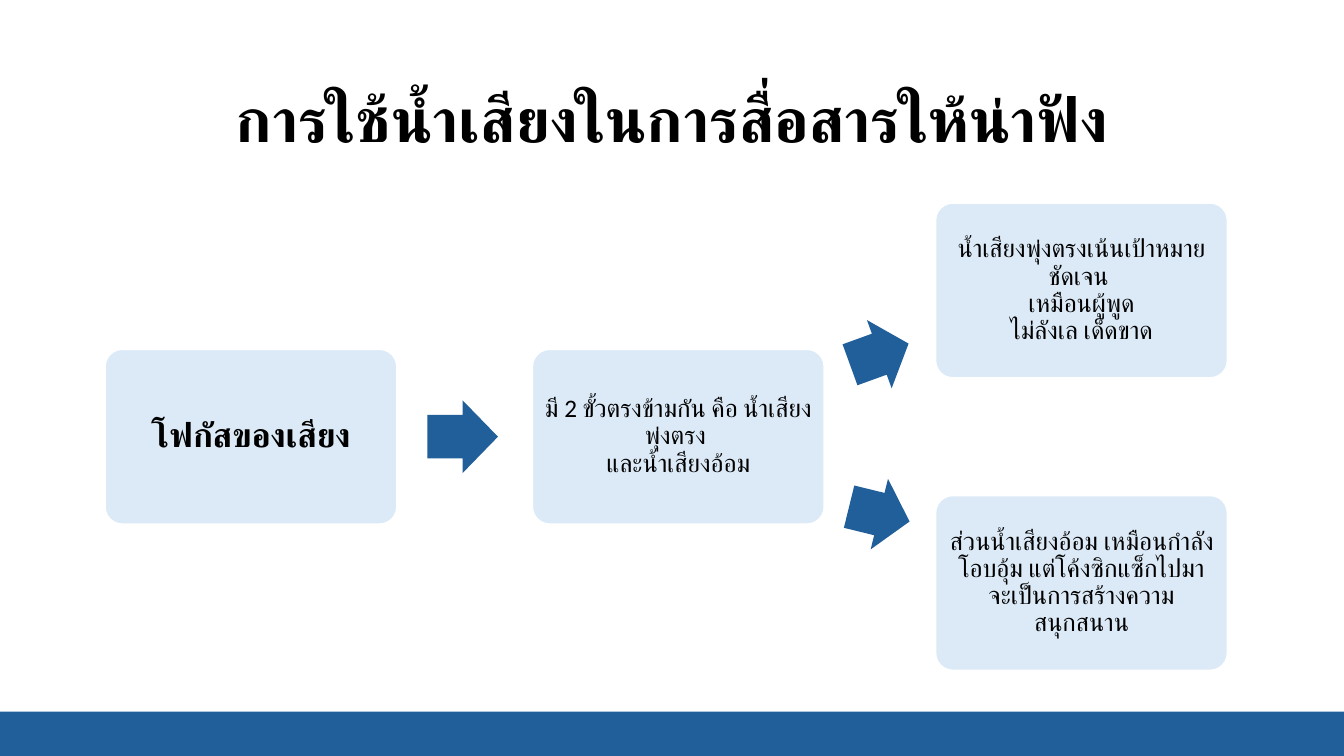
from dataclasses import dataclass

from lxml.etree import SubElement
from pptx import Presentation
from pptx.dml.color import RGBColor
from pptx.enum.shapes import MSO_SHAPE
from pptx.enum.text import MSO_ANCHOR, PP_ALIGN
from pptx.oxml.ns import qn
from pptx.util import Cm, Pt


@dataclass(frozen=True)
class Theme:
    font: str = "Calibri"
    text: RGBColor = RGBColor(0x00, 0x00, 0x00)
    card: RGBColor = RGBColor(0xDC, 0xEA, 0xF7)
    outline: RGBColor = RGBColor(0xFF, 0xFF, 0xFF)
    accent: RGBColor = RGBColor(0x21, 0x5F, 0x9A)
    title_size: int = 44
    heading_size: int = 24
    body_size: int = 18


THEME = Theme()
SLIDE_WIDTH, SLIDE_HEIGHT = 33.87, 19.05
CARD_WIDTH, CARD_HEIGHT = 7.37, 4.42


def write_text(shape, text, size=THEME.body_size, bold=False, margin=0.18):
    """Fill a shape with centred text; \\v marks a line break."""
    frame = shape.text_frame
    frame.word_wrap = True
    frame.vertical_anchor = MSO_ANCHOR.MIDDLE
    frame.margin_left = frame.margin_right = Cm(margin)
    frame.margin_top = frame.margin_bottom = Cm(margin)
    paragraph = frame.paragraphs[0]
    paragraph.text = text
    paragraph.alignment = PP_ALIGN.CENTER
    paragraph.line_spacing = 0.9
    for run in paragraph.runs:
        run.font.name = THEME.font
        run.font.size = Pt(size)
        run.font.bold = bold
        run.font.color.rgb = THEME.text
        # Thai is set in the complex-script font
        SubElement(run.font._element, qn("a:cs"), typeface=THEME.font)


def add_block(slide, preset, left, top, width, height, fill, outline=None):
    shape = slide.shapes.add_shape(preset, Cm(left), Cm(top), Cm(width), Cm(height))
    shape.shadow.inherit = False
    shape.fill.solid()
    shape.fill.fore_color.rgb = fill
    if outline is None:
        shape.line.fill.background()
    else:
        shape.line.color.rgb = outline
        shape.line.width = Pt(1.5)
    return shape


def add_title(slide, left, top, width, height):
    title = slide.shapes.add_textbox(Cm(left), Cm(top), Cm(width), Cm(height))
    write_text(title, "การใช้น้ำเสียงในการสื่อสารให้น่าฟัง", size=THEME.title_size, bold=True)


def add_card(slide, left, top, text, **text_format):
    card = add_block(slide, MSO_SHAPE.ROUNDED_RECTANGLE, left, top,
                     CARD_WIDTH, CARD_HEIGHT, THEME.card, THEME.outline)
    card.adjustments[0] = 0.1
    write_text(card, text, **text_format)


def add_arrow(slide, center_x, center_y, width, rotation=0):
    height = 1.83
    arrow = add_block(slide, MSO_SHAPE.RIGHT_ARROW, center_x - width / 2,
                      center_y - height / 2, width, height, THEME.accent)
    arrow.adjustments[0] = 0.6
    arrow.adjustments[1] = 0.5
    arrow.rotation = rotation


def add_diagram(slide, left, top, height):
    """One focus card, its two poles, and a branch for each pole."""
    middle = top + height / 2
    middle_top = middle - CARD_HEIGHT / 2
    poles_left, branches_left = left + 10.77, left + 20.93

    # Cards
    add_card(slide, left, middle_top, "โฟกัสของเสียง",
             size=THEME.heading_size, bold=True, margin=0.25)
    add_card(slide, poles_left, middle_top,
             "มี 2 ขั้วตรงข้ามกัน คือ น้ำเสียงพุ่งตรง \vและน้ำเสียงอ้อม")
    add_card(slide, branches_left, top,
             "น้ำเสียงพุ่งตรงเน้นเป้าหมายชัดเจน \vเหมือนผู้พูด\vไม่ลังเล เด็ดขาด")
    add_card(slide, branches_left, top + height - CARD_HEIGHT,
             "ส่วนน้ำเสียงอ้อม เหมือนกำลังโอบอุ้ม แต่โค้งซิกแซ็กไปมาจะเป็นการสร้างความสนุกสนาน")

    # Arrows
    branch_arrow_x = branches_left - 1.41
    add_arrow(slide, left + 9.02, middle, 1.78)
    add_arrow(slide, branch_arrow_x, middle - 2.08, 1.57, rotation=-19.9)
    add_arrow(slide, branch_arrow_x, middle + 1.95, 1.57, rotation=13.8)


def add_footer(slide, left, top, width, height):
    add_block(slide, MSO_SHAPE.RECTANGLE, left, top, width, height, THEME.accent)


def main():
    presentation = Presentation()
    presentation.slide_width = Cm(SLIDE_WIDTH)
    presentation.slide_height = Cm(SLIDE_HEIGHT)
    slide = presentation.slides.add_slide(presentation.slide_layouts[6])
    add_title(slide, 0, 1.98, SLIDE_WIDTH, 2.21)
    add_diagram(slide, 2.64, 5.11, 11.79)
    add_footer(slide, 0, 17.93, SLIDE_WIDTH, 1.12)
    presentation.save("out.pptx")


if __name__ == "__main__":
    main()
